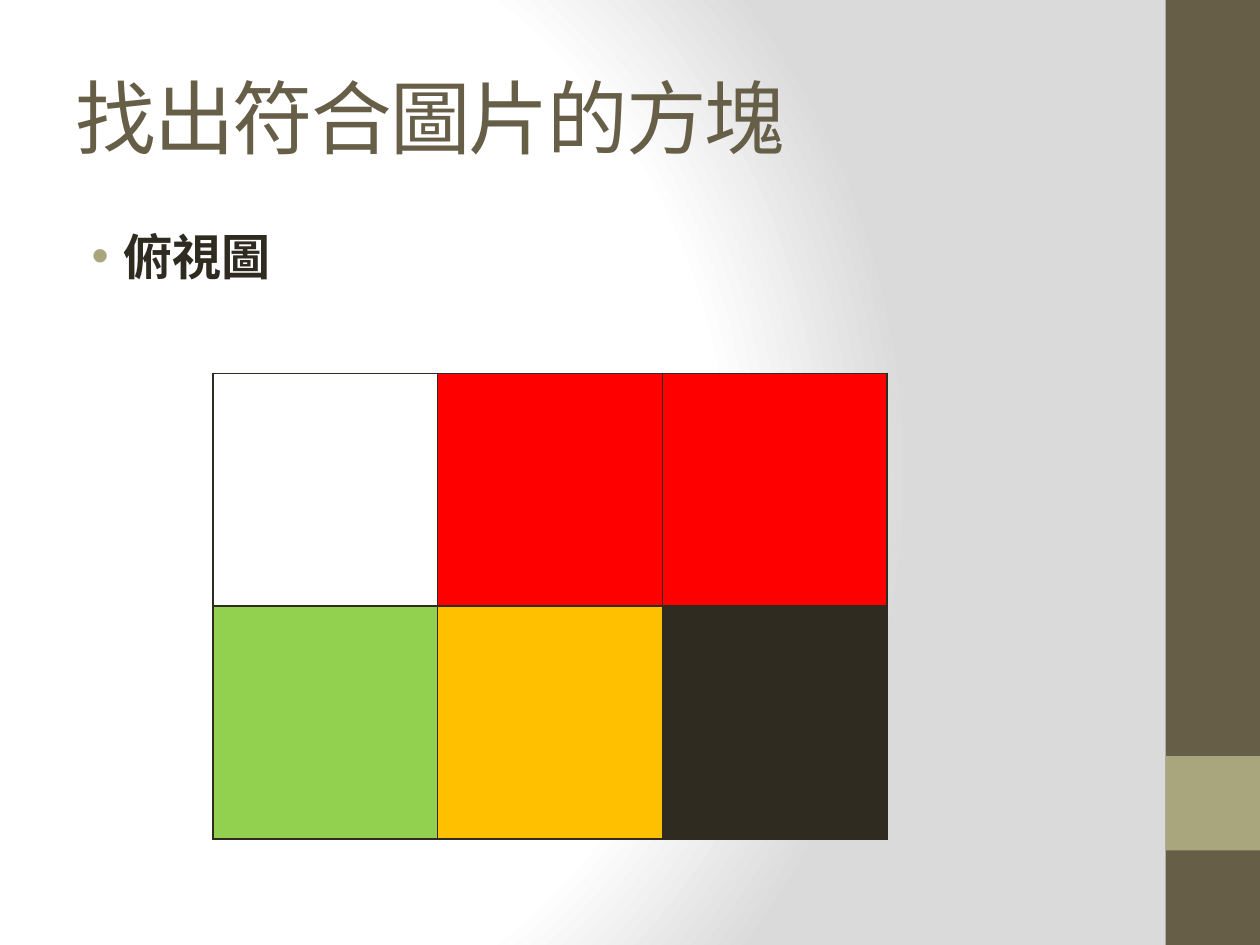
from pptx import Presentation
from pptx.dml.color import RGBColor as Rgb
from pptx.enum.shapes import MSO_SHAPE as Form
from pptx.enum.text import MSO_ANCHOR as Anchor
from pptx.oxml import parse_xml as to_xml
from pptx.oxml.ns import nsdecls
from pptx.util import Inches, Pt

WIDE, HIGH = Inches(10), Inches(7.5)
HUES = {
    "white": "FFFFFF", "gray": "DADADA", "brown": "675E47", "sand": "A9A57C",
    "dark": "2F2B20", "red": "FF0000", "green": "92D050", "gold": "FFC000",
}
TILES = [["white", "red", "red"], ["green", "gold", "dark"]]


def rgb(hue):
    """Return the named colour."""
    return Rgb.from_string(HUES[hue])


def area(left, top, width, height):
    """Turn shares of the slide into a box of lengths."""
    return [int(share * full) for share, full in
            zip((left, top, width, height), (WIDE, HIGH, WIDE, HIGH))]


def add_glow(slide):
    """Fill the background with a round gradient."""
    stops = "".join(
        f'<a:gs pos="{pos * 1000}"><a:srgbClr val="{HUES[hue]}"/></a:gs>'
        for pos, hue in ((0, "white"), (75, "white"), (100, "gray")))
    slide.element.cSld.insert(0, to_xml(
        f'<p:bg {nsdecls("p", "a")}><p:bgPr><a:gradFill rotWithShape="1">'
        f'<a:gsLst>{stops}</a:gsLst><a:path path="circle">'
        '<a:fillToRect l="20000" t="50000" r="100000" b="50000"/></a:path>'
        '</a:gradFill><a:effectLst/></p:bgPr></p:bg>'))


def add_band(slide, box):
    """Draw the side band with its square accent."""
    left, top, width, height = box
    accent = (left, top + int(height * 0.8), width, width)
    for part, hue in ((box, "brown"), (accent, "sand")):
        rect = slide.shapes.add_shape(Form.RECTANGLE, *part)
        rect.shadow.inherit = False
        rect.fill.solid()
        rect.fill.fore_color.rgb = rgb(hue)
        rect.line.fill.background()


def add_text(slide, box, text, size, face, hue):
    """Add a line of text and return its frame, paragraph and run."""
    frame = slide.shapes.add_textbox(*box).text_frame
    frame.word_wrap = True
    frame.text = text
    para = frame.paragraphs[0]
    run = para.runs[0]
    run.font.size, run.font.name = Pt(size), face
    run.font.color.rgb = rgb(hue)
    return frame, para, run


def add_title(slide, box):
    """Add the slide title."""
    frame, _, run = add_text(slide, box, "找出符合圖片的方塊", 46, "Cambria", "brown")
    frame.vertical_anchor = Anchor.MIDDLE
    run.font._element.set("spc", "-100")


def add_body(slide, box):
    """Add the bulleted view name."""
    _, para, run = add_text(slide, box, "俯視圖", 28, "Calibri", "dark")
    run.font.bold = True
    para.space_before = Pt(5.6)
    props = para._p.get_or_add_pPr()
    props.set("marL", str(Inches(0.38)))
    props.set("indent", str(Inches(-0.25)))
    for mark in (f'<a:buClr {nsdecls("a")}><a:srgbClr val="{HUES["sand"]}"/></a:buClr>',
                 f'<a:buFont {nsdecls("a")} typeface="Arial"/>',
                 f'<a:buChar {nsdecls("a")} char="•"/>'):
        props.append(to_xml(mark))


def add_edges(cell):
    """Give a cell thin dark borders."""
    props = cell._tc.get_or_add_tcPr()
    for spot, side in enumerate("LRTB"):
        props.insert(spot, to_xml(
            f'<a:ln{side} {nsdecls("a")} w="{Pt(1)}"><a:solidFill>'
            f'<a:srgbClr val="{HUES["dark"]}"/></a:solidFill></a:ln{side}>'))


def add_tiles(slide, box):
    """Add the table of coloured tiles."""
    table = slide.shapes.add_table(len(TILES), len(TILES[0]), *box).table
    table.first_row = table.horz_banding = False
    for row, hues in enumerate(TILES):
        for col, hue in enumerate(hues):
            cell = table.cell(row, col)
            cell.fill.solid()
            cell.fill.fore_color.rgb = rgb(hue)
            add_edges(cell)


def main():
    """Build and save the slide."""
    deck = Presentation()
    deck.slide_width, deck.slide_height = WIDE, HIGH
    slide = deck.slides.add_slide(deck.slide_layouts[6])
    add_glow(slide)
    add_band(slide, area(0.925, 0, 0.075, 1))
    add_title(slide, area(0.05, 0.04, 0.833, 1 / 6))
    add_body(slide, area(0.05, 0.233, 0.833, 0.7))
    add_tiles(slide, area(0.169, 0.395, 0.535, 0.493))
    deck.save("out.pptx")


if __name__ == "__main__":
    main()
